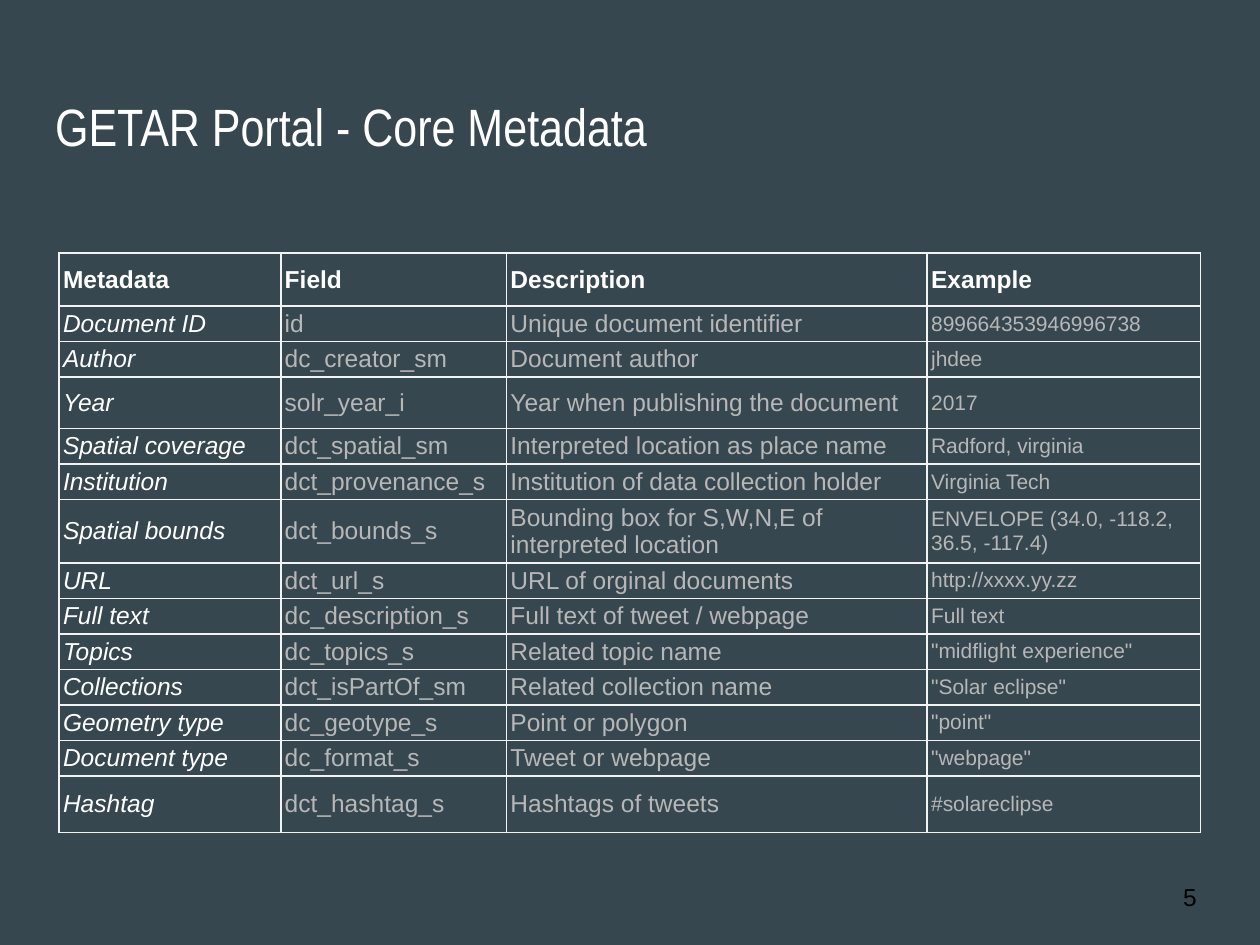
import pptx
import pptx.dml.color
import pptx.enum.text
import pptx.oxml
import pptx.oxml.ns
import pptx.util

Cm, Pt = pptx.util.Cm, pptx.util.Pt
RGBColor = pptx.dml.color.RGBColor
ANCHOR = pptx.enum.text.MSO_ANCHOR

SLATE = RGBColor(0x37, 0x47, 0x4F)
WHITE = RGBColor(0xFF, 0xFF, 0xFF)
GREY = RGBColor(0xB7, 0xB7, 0xB7)
BLACK = RGBColor(0x00, 0x00, 0x00)
RULE = RGBColor(0xF3, 0xF3, 0xF3)

HEADER_FORMAT = {"size": Pt(14), "bold": True, "italic": False, "color": WHITE}
COLUMN_FORMATS = [
    {"size": Pt(14), "bold": False, "italic": True, "color": WHITE},
    {"size": Pt(14), "bold": False, "italic": False, "color": GREY},
    {"size": Pt(14), "bold": False, "italic": False, "color": GREY},
    {"size": Pt(12), "bold": False, "italic": False, "color": GREY},
]
COLUMN_WIDTHS = [4.47, 4.55, 8.48, 5.51]
ROW_HEIGHT = 0.7
TALL_ROWS = {"Metadata": 1.07, "Year": 1.04, "Spatial bounds": 1.2, "Hashtag": 1.14}

METADATA = [
    ("Metadata", "Field", "Description", "Example"),
    ("Document ID", "id", "Unique document identifier", "899664353946996738"),
    ("Author", "dc_creator_sm", "Document author", "jhdee"),
    ("Year", "solr_year_i", "Year when publishing the document", "2017"),
    ("Spatial coverage", "dct_spatial_sm", "Interpreted location as place name", "Radford, virginia"),
    ("Institution", "dct_provenance_s", "Institution of data collection holder", "Virginia Tech"),
    ("Spatial bounds", "dct_bounds_s", "Bounding box for S,W,N,E of interpreted location",
     "ENVELOPE (34.0, -118.2, 36.5, -117.4)"),
    ("URL", "dct_url_s", "URL of orginal documents", "http://xxxx.yy.zz"),
    ("Full text", "dc_description_s", "Full text of tweet / webpage", "Full text"),
    ("Topics", "dc_topics_s", "Related topic name", '"midflight experience"'),
    ("Collections", "dct_isPartOf_sm", "Related collection name", '"Solar eclipse"'),
    ("Geometry type", "dc_geotype_s", "Point or polygon", '"point"'),
    ("Document type", "dc_format_s", "Tweet or webpage", '"webpage"'),
    ("Hashtag", "dct_hashtag_s", "Hashtags of tweets", "#solareclipse"),
]


def set_attributes(target, values):
    for name, value in values.items():
        setattr(target, name, value)


def write_text(frame, text, color, name="Arial", **font_values):
    paragraph = frame.paragraphs[0]
    paragraph.alignment = pptx.enum.text.PP_ALIGN.LEFT
    font = paragraph.add_run().font
    paragraph.runs[0].text = text
    set_attributes(font, {"name": name, **font_values})
    font.color.rgb = color


def set_frame(frame, inset, anchor):
    sides = ("margin_left", "margin_top", "margin_right", "margin_bottom")
    set_attributes(frame, {
        **dict.fromkeys(sides, Cm(inset)),
        "word_wrap": True,
        "auto_size": pptx.enum.text.MSO_AUTO_SIZE.NONE,
        "vertical_anchor": anchor,
    })


def add_heading(slide, left, top, width, height):
    heading = slide.shapes.title
    set_attributes(heading, {"left": Cm(left), "top": Cm(top),
                             "width": Cm(width), "height": Cm(height)})
    set_frame(heading.text_frame, 0.25, ANCHOR.TOP)
    write_text(heading.text_frame, "GETAR Portal - Core Metadata", WHITE,
               name="Arial Narrow", size=Pt(30))


def add_cell_borders(cell):
    properties = cell._tc.get_or_add_tcPr()
    for side in ("lnL", "lnR", "lnT", "lnB"):
        properties.append(pptx.oxml.parse_xml(
            f'<a:{side} {pptx.oxml.ns.nsdecls("a")} w="{Pt(1)}">'
            f'<a:solidFill><a:srgbClr val="{RULE}"/></a:solidFill></a:{side}>'))


def fill_cell(cell, text, text_format):
    sides = ("margin_left", "margin_top", "margin_right", "margin_bottom")
    set_attributes(cell, {**dict.fromkeys(sides, Cm(0.08)),
                          "vertical_anchor": ANCHOR.MIDDLE})
    add_cell_borders(cell)
    cell.fill.background()
    write_text(cell.text_frame, text, **text_format)


def add_metadata_table(slide, left, top):
    heights = [TALL_ROWS.get(entry[0], ROW_HEIGHT) for entry in METADATA]
    table = slide.shapes.add_table(
        len(METADATA), len(COLUMN_WIDTHS), Cm(left), Cm(top),
        Cm(sum(COLUMN_WIDTHS)), Cm(sum(heights))).table
    set_attributes(table, {"first_row": False, "horz_banding": False})
    for column, width in zip(table.columns, COLUMN_WIDTHS):
        column.width = Cm(width)
    for index, (row, height, entry) in enumerate(zip(table.rows, heights, METADATA)):
        row.height = Cm(height)
        formats = COLUMN_FORMATS if index else [HEADER_FORMAT] * len(entry)
        for cell, text, text_format in zip(row.cells, entry, formats):
            fill_cell(cell, text, text_format)


def add_page_number(slide, left, top, width, height):
    frame = slide.shapes.add_textbox(Cm(left), Cm(top), Cm(width), Cm(height)).text_frame
    set_frame(frame, 0.25, ANCHOR.MIDDLE)
    write_text(frame, "5", BLACK, size=Pt(14))


def main():
    presentation = pptx.Presentation()
    set_attributes(presentation, {"slide_width": Cm(25.4), "slide_height": Cm(19.05)})
    slide = presentation.slides.add_slide(presentation.slide_layouts[5])
    slide.background.fill.solid()
    slide.background.fill.fore_color.rgb = SLATE
    add_heading(slide, 0.86, 1.65, 20.07, 1.75)
    add_metadata_table(slide, 1.19, 5.1)
    add_page_number(slide, 23.6, 17.35, 1.52, 1.45)
    presentation.save("out.pptx")


if __name__ == "__main__":
    main()
